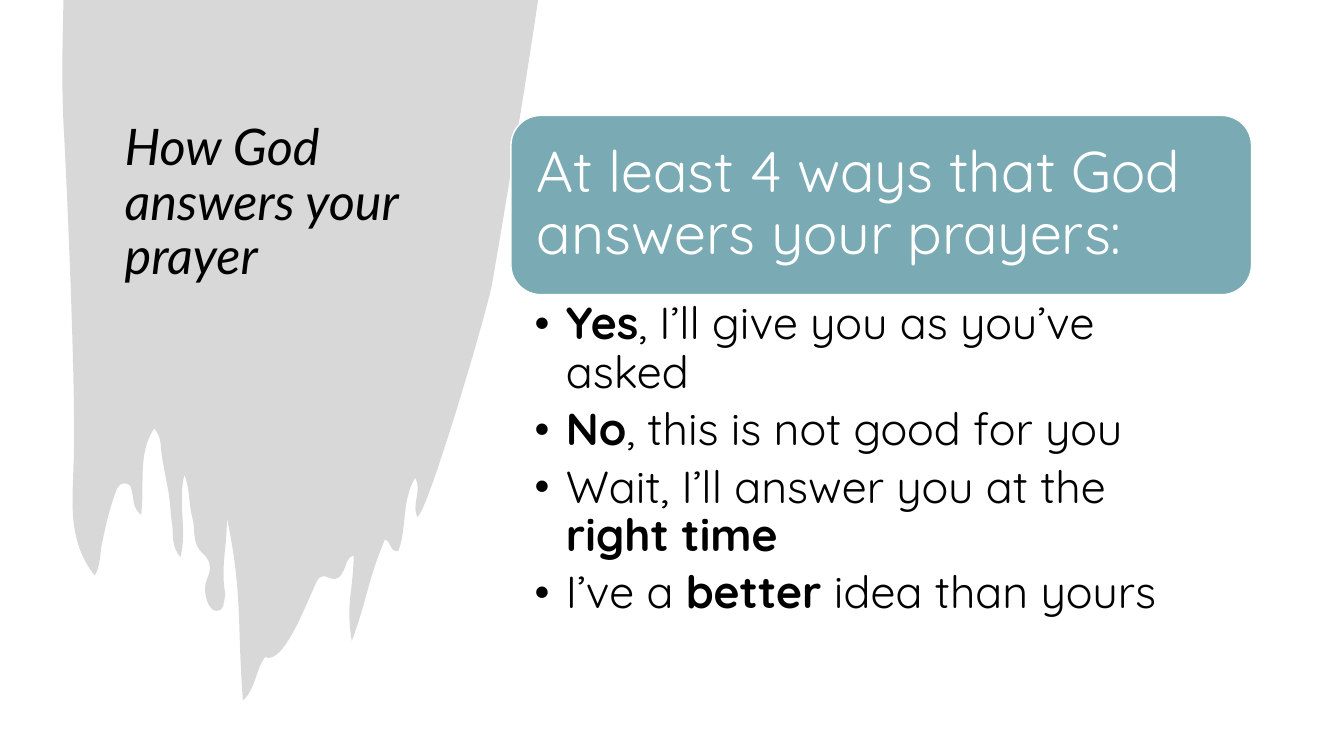
import pptx
import pptx.util
import pptx.dml.color
import pptx.enum.shapes
import pptx.enum.text
import pptx.oxml.ns
import lxml.etree

Pt = pptx.util.Pt
ANCHOR = pptx.enum.text.MSO_ANCHOR
KIND = pptx.enum.shapes.MSO_SHAPE
COLORS = {"paint": "404040", "teal": "7AAAB3", "white": "FFFFFF", "black": "000000"}

# Paint edge in units of 0.72 pt: each row is two control points and an end
START = (63, -1)
CORNER = (534, -1)
CURVES = [
    (522, 81, 498, 226, 488, 283), (481, 317, 424, 509, 414, 513),
    (408, 500, 419, 487, 412, 474), (398, 497, 404, 525, 395, 547),
    (386, 547, 388, 537, 382, 535), (364, 578, 365, 593, 349, 636),
    (343, 597, 350, 591, 351, 551), (343, 554, 344, 561, 341, 566),
    (338, 572, 335, 577, 326, 573), (317, 569, 315, 575, 312, 582),
    (303, 601, 281, 660, 263, 652), (255, 661, 253, 685, 241, 695),
    (235, 616, 241, 590, 225, 513), (226, 537, 219, 561, 223, 586),
    (224, 590, 223, 594, 222, 598), (222, 602, 220, 606, 215, 606),
    (211, 606, 209, 603, 207, 600), (203, 591, 202, 582, 206, 573),
    (210, 564, 209, 556, 201, 549), (190, 539, 194, 525, 191, 514),
    (187, 501, 189, 487, 183, 471), (176, 499, 186, 525, 179, 553),
    (170, 542, 172, 531, 171, 522), (169, 510, 169, 498, 167, 487),
    (165, 477, 163, 466, 161, 455), (159, 445, 161, 434, 153, 425),
    (136, 451, 144, 481, 140, 511), (131, 503, 133, 495, 131, 488),
    (130, 484, 130, 481, 126, 480), (121, 478, 118, 482, 116, 485),
    (109, 503, 105, 521, 101, 540), (99, 550, 100, 561, 94, 571),
    (67, 537, 72, 499, 73, 461), (76, 400, 66, 174, 63, 123),
    (61, 82, 62, 41, 63, 0),
]
BULLETS = [
    [("Yes", True), (", I’ll give you as you’ve asked", False)],
    [("No", True), (", this is not good for you", False)],
    [("Wait, I’ll answer you at the ", False), ("right time", True)],
    [("I’ve a ", False), ("better", True), (" idea than yours", False)],
]


def rgb(name):
    return pptx.dml.color.RGBColor.from_string(COLORS[name])


def tag(parent, name, **attrs):
    return lxml.etree.SubElement(parent, pptx.oxml.ns.qn(name), attrs)


def write(shape, paras, font, size, color, italic=False, bullet=False,
          anchor=ANCHOR.TOP, inset=(7.2, 3.6, 7.2, 3.6), after=0):
    """Fill a shape with paragraphs, each a list of (text, bold) runs."""
    frame = shape.text_frame
    frame.word_wrap = True
    frame.vertical_anchor = anchor
    frame.margin_left, frame.margin_top, frame.margin_right, frame.margin_bottom = map(Pt, inset)
    for i, runs in enumerate(paras):
        para = frame.add_paragraph() if i else frame.paragraphs[0]
        para.alignment = pptx.enum.text.PP_ALIGN.LEFT
        para.line_spacing = 0.9
        para.space_after = Pt(after)
        if bullet:
            props = para._p.get_or_add_pPr()
            props.set("marL", str(Pt(22.5)))
            props.set("indent", str(Pt(-22.5)))
            tag(props, "a:buFont", typeface=font)
            tag(props, "a:buChar", char="•")
        for text, bold in runs:
            run = para.add_run()
            run.text = text
            run.font.name = font
            run.font.size = Pt(size)
            run.font.bold = bold
            run.font.italic = italic
            run.font.color.rgb = rgb(color)


def tint(shape, color, edge=None):
    shape.shadow.inherit = False
    shape.fill.solid()
    shape.fill.fore_color.rgb = rgb(color)
    if edge:
        shape.line.color.rgb = rgb(edge)
        shape.line.width = Pt(1)
    else:
        shape.line.fill.background()


def paint(slide):
    ends = [START, CORNER] + [curve[4:] for curve in CURVES]
    left, top = (min(axis) for axis in zip(*ends))
    pen = slide.shapes.build_freeform(*START, scale=Pt(0.72))
    pen.add_line_segments(ends[1:], close=True)
    shape = pen.convert_to_shape()
    tint(shape, "paint")
    props = shape._element.spPr
    shade = props.find(".//" + pptx.oxml.ns.qn("a:srgbClr"))
    tag(shade, "a:alpha", val="20000")

    # Turn every side after the top edge into a cubic curve
    sides = props.findall(".//" + pptx.oxml.ns.qn("a:lnTo"))[1:]
    for side, curve in zip(sides, CURVES):
        bend = lxml.etree.Element(pptx.oxml.ns.qn("a:cubicBezTo"))
        for x, y in zip(curve[::2], curve[1::2]):
            tag(bend, "a:pt", x=str(x - left), y=str(y - top))
        side.getparent().replace(side, bend)


def block(slide, kind, color, *box, edge=None):
    shape = slide.shapes.add_shape(kind, *map(Pt, box))
    tint(shape, color, edge)
    return shape


def label(slide, *box):
    return slide.shapes.add_textbox(*map(Pt, box))


def main():
    deck = pptx.Presentation()
    deck.slide_width, deck.slide_height = Pt(960), Pt(540)
    slide = deck.slides.add_slide(deck.slide_layouts[6])

    # White ground, paint stroke and title
    block(slide, KIND.RECTANGLE, "white", 0, 0, 960, 540)
    paint(slide)
    write(label(slide, 82, 43.5, 246, 204), [[("How God answers your prayer", False)]],
          "Lato", 36, "black", italic=True, anchor=ANCHOR.MIDDLE)

    # Heading panel and the four answers
    panel = block(slide, KIND.ROUNDED_RECTANGLE, "teal", 365, 82.5, 529, 128, edge="white")
    write(panel, [[("At least 4 ways that God answers your prayers:", False)]],
          "Quicksand", 41, "white", anchor=ANCHOR.MIDDLE, inset=(12.2,) * 4)
    write(label(slide, 365, 211, 529, 247), BULLETS, "Quicksand", 32, "black",
          bullet=True, inset=(16.8, 4.1, 23, 4.1), after=6.4)

    deck.save("out.pptx")


if __name__ == "__main__":
    main()
